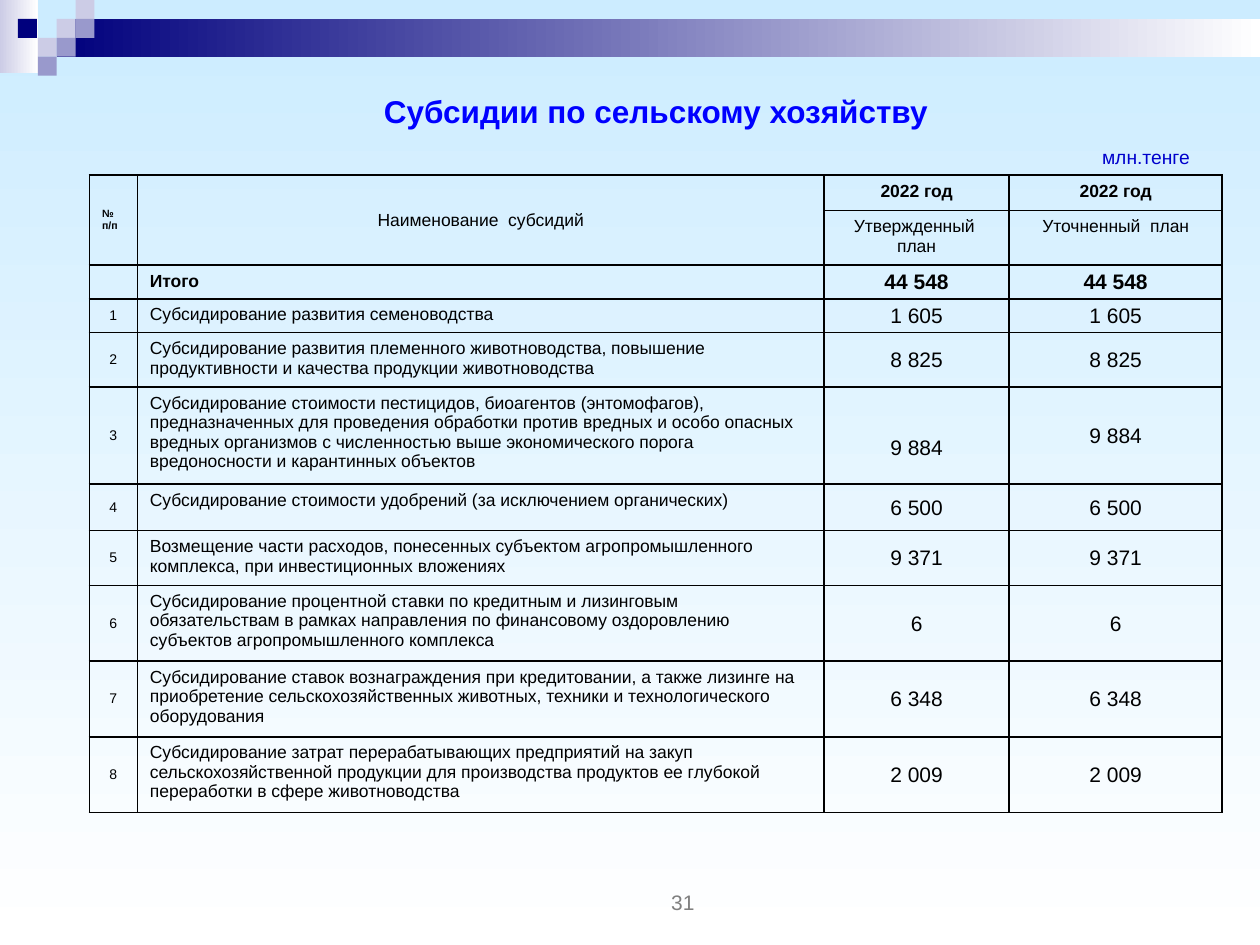
from lxml.etree import SubElement
from pptx import Presentation
from pptx.dml.color import RGBColor
from pptx.enum.shapes import MSO_SHAPE
from pptx.enum.text import MSO_ANCHOR as Anchor, PP_ALIGN as Align
from pptx.oxml.ns import qn
from pptx.util import Inches, Pt

SKY = RGBColor(0xCC, 0xEC, 0xFF)
WHITE = RGBColor(0xFF, 0xFF, 0xFF)
BLACK = RGBColor(0, 0, 0)
NAVY = RGBColor(0, 0, 0x7D)
LILAC = RGBColor(0xCC, 0xCC, 0xE6)
VIOLET = RGBColor(0x99, 0x99, 0xCC)
TITLE_BLUE = RGBColor(0, 0, 0xFF)
UNIT_BLUE = RGBColor(0, 0, 0xCC)
GRAY = RGBColor(0x7F, 0x7F, 0x7F)
FONT = "Arial"

SLIDE_WIDTH, SLIDE_HEIGHT = 10, 7.5
SQUARE = 0.15  # side of one mosaic square
MOSAIC = [  # column, row, colour
    (3, 1, LILAC), (4, 0, LILAC), (4, 1, VIOLET), (2, 2, LILAC),
    (0.95, 1, NAVY), (3, 2, VIOLET), (2, 3, VIOLET),
]

COLUMN_WIDTHS = [0.38, 5.45, 1.47, 1.69]
ROW_HEIGHTS = [0.28, 0.41, 0.26, 0.26, 0.41, 0.72, 0.37, 0.41, 0.57, 0.57, 0.57]
TEXT_MARGINS = (0.1, 0.05, 0.1, 0.05)
VALUE_MARGINS = (0.01, 0.01, 0.01, 0)
TOTAL = "44 548"
SUBSIDIES = [
    ("Субсидирование развития семеноводства", "1 605"),
    ("Субсидирование развития племенного животноводства, повышение "
     "продуктивности и качества продукции животноводства", "8 825"),
    ("Субсидирование стоимости пестицидов, биоагентов (энтомофагов), "
     "предназначенных для проведения обработки против вредных и особо опасных "
     "вредных организмов с численностью выше экономического порога "
     "вредоносности и карантинных объектов", "9 884"),
    ("Субсидирование стоимости удобрений (за исключением органических)", "6 500"),
    ("Возмещение части расходов, понесенных субъектом агропромышленного "
     "комплекса, при инвестиционных вложениях", "9 371"),
    ("Субсидирование процентной ставки по кредитным и лизинговым "
     "обязательствам в рамках направления по финансовому оздоровлению "
     "субъектов агропромышленного комплекса", "6"),
    ("Субсидирование ставок вознаграждения при кредитовании, а также лизинге на "
     "приобретение сельскохозяйственных животных, техники и технологического "
     "оборудования", "6 348"),
    ("Субсидирование затрат перерабатывающих предприятий на закуп "
     "сельскохозяйственной продукции для производства продуктов ее глубокой "
     "переработки в сфере животноводства", "2 009"),
]


def set_gradient(fill, start, end, angle=0):
    fill.gradient()
    fill.gradient_angle = angle
    for stop, color in zip(fill.gradient_stops, (start, end)):
        stop.color.rgb = color


def write(text_frame, text, size, color=BLACK, bold=False, align=Align.CENTER):
    text_frame.text = text
    paragraph = text_frame.paragraphs[0]
    paragraph.alignment = align
    for run in paragraph.runs:
        run.font.name = FONT
        run.font.size = Pt(size)
        run.font.bold = bold
        run.font.color.rgb = color


def add_label(slide, box, text, size, color, bold=False, anchor=Anchor.TOP):
    text_frame = slide.shapes.add_textbox(*map(Inches, box)).text_frame
    text_frame.word_wrap = True
    text_frame.vertical_anchor = anchor
    write(text_frame, text, size, color, bold)


def add_rectangle(slide, box):
    shape = slide.shapes.add_shape(MSO_SHAPE.RECTANGLE, *map(Inches, box))
    shape.shadow.inherit = False
    shape.line.fill.background()
    return shape


def add_header_band(slide, left, top, width):
    corner = add_rectangle(slide, (left, top, 2 * SQUARE, 0.58))
    set_gradient(corner.fill, LILAC, WHITE)
    band = add_rectangle(
        slide, (left + 3 * SQUARE, top + SQUARE, width - 3 * SQUARE, 2 * SQUARE))
    set_gradient(band.fill, NAVY, WHITE)
    for column, row, color in MOSAIC:
        square = add_rectangle(
            slide, (left + column * SQUARE, top + row * SQUARE, SQUARE, SQUARE))
        square.fill.solid()
        square.fill.fore_color.rgb = color


def style_cell(cell):
    """Give the cell black borders and no fill."""
    properties = cell._tc.get_or_add_tcPr()
    for side in ("a:lnL", "a:lnR", "a:lnT", "a:lnB"):
        line = SubElement(properties, qn(side), w=str(Pt(1)))
        solid = SubElement(line, qn("a:solidFill"))
        SubElement(solid, qn("a:srgbClr"), val=str(BLACK))
    cell.fill.background()


def fill_cell(cell, text, size=10, bold=False, align=Align.CENTER,
              anchor=Anchor.TOP, margins=TEXT_MARGINS):
    write(cell.text_frame, text, size, bold=bold, align=align)
    cell.vertical_anchor = anchor
    (cell.margin_left, cell.margin_top,
     cell.margin_right, cell.margin_bottom) = map(Inches, margins)


def fill_row(table, row, number, name, value, bold=False):
    fill_cell(table.cell(row, 0), number, 8, anchor=Anchor.MIDDLE)
    fill_cell(table.cell(row, 1), name, bold=bold, align=Align.LEFT)
    for column in (2, 3):
        fill_cell(table.cell(row, column), value, 12, bold,
                  anchor=Anchor.MIDDLE, margins=VALUE_MARGINS)


def add_subsidy_table(slide, left, top):
    frame = slide.shapes.add_table(
        len(ROW_HEIGHTS), len(COLUMN_WIDTHS), Inches(left), Inches(top),
        Inches(sum(COLUMN_WIDTHS)), Inches(sum(ROW_HEIGHTS)))
    table = frame.table
    table.first_row = table.horz_banding = False
    for column, width in zip(table.columns, COLUMN_WIDTHS):
        column.width = Inches(width)
    for row, height in zip(table.rows, ROW_HEIGHTS):
        row.height = Inches(height)
        for cell in row.cells:
            style_cell(cell)

    for column in (0, 1):
        table.cell(0, column).merge(table.cell(1, column))
    fill_cell(table.cell(0, 0), "№ п/п", 6, True, Align.LEFT, Anchor.MIDDLE)
    fill_cell(table.cell(0, 1), "Наименование  субсидий", anchor=Anchor.MIDDLE)
    for column, plan in ((2, "Утвержденный  план"), (3, "Уточненный  план")):
        fill_cell(table.cell(0, column), "2022 год", bold=True)
        fill_cell(table.cell(1, column), plan)

    fill_row(table, 2, "", "Итого", TOTAL, bold=True)
    # The empty cell must not stretch its row.
    empty = table.cell(2, 0).text_frame.paragraphs[0]
    SubElement(empty._p, qn("a:endParaRPr"), sz="800")
    for number, (name, value) in enumerate(SUBSIDIES, 1):
        fill_row(table, number + 2, str(number), name, value)
    table.cell(5, 2).margin_top = Inches(0.2)  # this value sits lower


def main():
    presentation = Presentation()
    presentation.slide_width = Inches(SLIDE_WIDTH)
    presentation.slide_height = Inches(SLIDE_HEIGHT)
    slide = presentation.slides.add_slide(presentation.slide_layouts[6])
    set_gradient(slide.background.fill, SKY, WHITE, angle=270)
    add_header_band(slide, 0, 0, SLIDE_WIDTH)
    add_label(slide, (0.71, 0.63, 8.99, 0.5), "Субсидии по сельскому хозяйству",
              18, TITLE_BLUE, bold=True, anchor=Anchor.MIDDLE)
    add_subsidy_table(slide, 0.71, 1.39)
    add_label(slide, (4.42, 7.06, 2, 0.25), "31", 12, GRAY, anchor=Anchor.BOTTOM)
    add_label(slide, (8.54, 1.1, 1.11, 0.28), "млн.тенге", 11, UNIT_BLUE)
    presentation.save("out.pptx")


if __name__ == "__main__":
    main()
